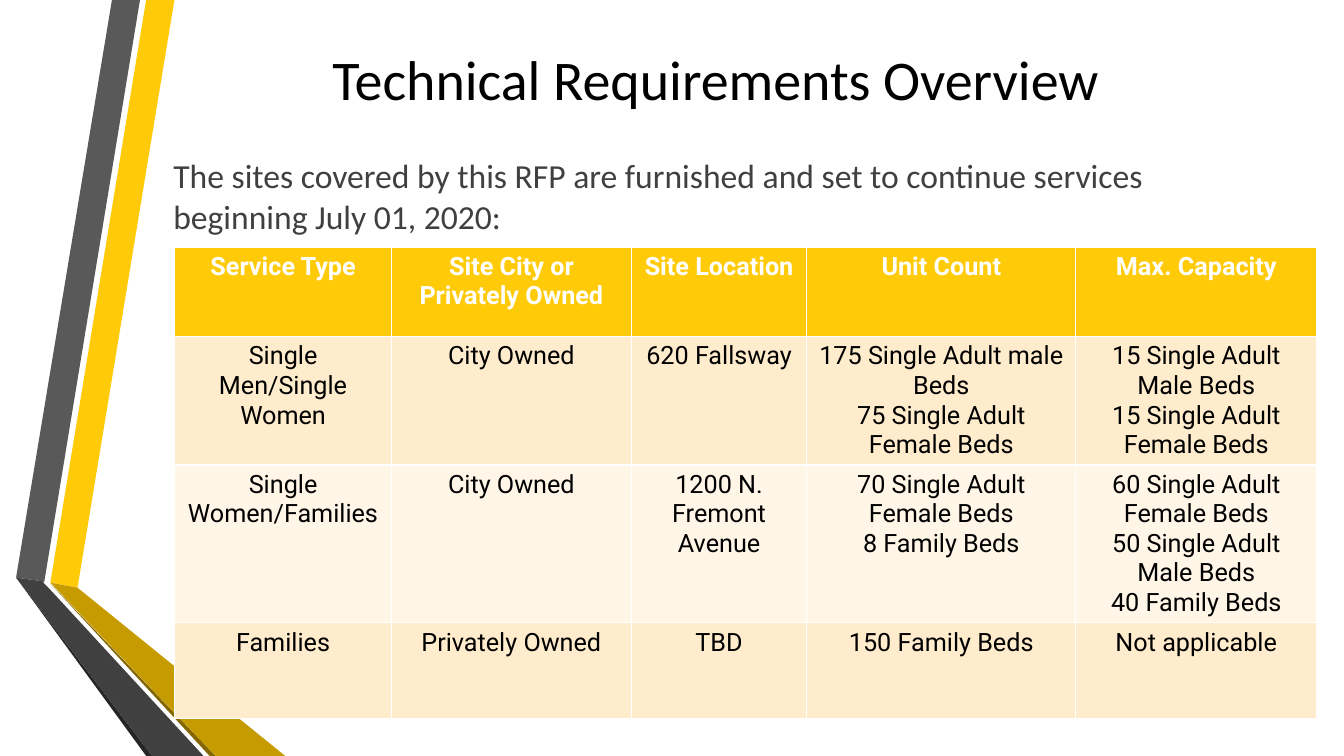
"""Build the Technical Requirements Overview slide."""
from pptx import Presentation
from pptx.dml.color import RGBColor
from pptx.enum.text import MSO_ANCHOR, MSO_AUTO_SIZE, PP_ALIGN
from pptx.oxml.ns import qn
from pptx.util import Pt
from lxml import etree

CENTER, LEFT = PP_ALIGN.CENTER, PP_ALIGN.LEFT
TOP, MIDDLE = MSO_ANCHOR.TOP, MSO_ANCHOR.MIDDLE
NO_AUTOFIT = MSO_AUTO_SIZE.NONE

WHITE = RGBColor(0xFF, 0xFF, 0xFF)
BLACK = RGBColor(0x00, 0x00, 0x00)
YELLOW = RGBColor(0xFF, 0xCA, 0x08)
GOLD = RGBColor(0xC5, 0x9B, 0x00)
OLIVE = RGBColor(0x84, 0x67, 0x00)
GRAY = RGBColor(0x59, 0x59, 0x59)
CHARCOAL = RGBColor(0x40, 0x40, 0x40)
NEAR_BLACK = RGBColor(0x26, 0x26, 0x26)
PEACH = RGBColor(0xFF, 0xEC, 0xCC)
CREAM = RGBColor(0xFF, 0xF6, 0xE7)

RIBBONS = [
    (YELLOW, [(36, 416.2), (55.4, 419.8), (124.6, 0), (104.4, 0)]),
    (GRAY, [(100, 0), (80, 0), (11.5, 412.6), (31.7, 415.4)]),
    (NEAR_BLACK, [(11.5, 412.6), (104.4, 540), (108.7, 540)]),
    (OLIVE, [(36, 416.9), (149.8, 540), (154.1, 540)]),
    (GOLD, [(36, 416.2), (154.1, 540), (203.8, 540), (55.4, 419.8)]),
    (CHARCOAL, [(145.4, 540), (34.6, 419.8), (31, 416.2), (31.7, 415.4),
                (11.5, 412.6), (108.7, 540)]),
]
COL_WIDTHS = [154.8, 171.4, 125.3, 192.2, 172.1]
ROW_HEIGHTS = [64, 68.4, 70.6, 68.4]
ROW_FILLS = [YELLOW, PEACH, CREAM, PEACH]
ROWS = [
    ["Service Type", "Site City or Privately Owned", "Site Location",
     "Unit Count", "Max. Capacity"],
    ["Single Men/Single Women", "City Owned", "620 Fallsway",
     "175 Single Adult male Beds\n75 Single Adult Female Beds",
     "15 Single Adult\nMale Beds\n15 Single Adult Female Beds"],
    ["Single Women/Families", "City Owned", "1200 N. Fremont Avenue",
     "70 Single Adult Female Beds\n8 Family Beds",
     "60 Single Adult Female Beds\n50 Single Adult Male Beds\n40 Family Beds"],
    ["Families", "Privately Owned", "TBD", "150 Family Beds", "Not applicable"],
]


def format_text(tf, font, size, color, align, bold=False):
    for p in tf.paragraphs:
        p.alignment = align
        for r in p.runs:
            r.font.name = font
            r.font.size = Pt(size)
            r.font.bold = bold
            r.font.color.rgb = color


prs = Presentation()
prs.slide_width, prs.slide_height = Pt(960), Pt(540)
s = prs.slides.add_slide(prs.slide_layouts[1])

for color, points in RIBBONS:
    corners = [(Pt(x), Pt(y)) for x, y in points]
    builder = s.shapes.build_freeform(*corners[0])
    builder.add_line_segments(corners[1:], close=True)
    sp = builder.convert_to_shape()
    sp.fill.solid()
    sp.fill.fore_color.rgb = color
    sp.line.fill.background()
    sp.shadow.inherit = False

title, body = s.shapes.title, s.placeholders[1]
for sp, top, height, anchor, text, size, color, align in [
    (title, 20.9, 69.8, MIDDLE, "Technical Requirements Overview", 40, BLACK, CENTER),
    (body, 107.2, 66, TOP, "The sites covered by this RFP are furnished and set to "
     "continue services beginning July 01, 2020:", 24, CHARCOAL, LEFT),
]:
    sp.left, sp.top, sp.width, sp.height = Pt(116.6), Pt(top), Pt(789.1), Pt(height)
    tf = sp.text_frame
    tf.text = text
    tf.word_wrap = True
    tf.auto_size = NO_AUTOFIT
    tf.vertical_anchor = anchor
    format_text(tf, "Calibri", size, color, align)

p = body.text_frame.paragraphs[0]
p.space_before = Pt(0)
pPr = p._p.get_or_add_pPr()
pPr.set("marL", "0")
pPr.set("indent", "0")
etree.SubElement(pPr, qn("a:buNone"))

table = s.shapes.add_table(len(ROWS), len(COL_WIDTHS), Pt(124.8), Pt(176.4),
                           Pt(sum(COL_WIDTHS)), Pt(sum(ROW_HEIGHTS))).table
for column, width in zip(table.columns, COL_WIDTHS):
    column.width = Pt(width)
for i, (row, height, fill, texts) in enumerate(
        zip(table.rows, ROW_HEIGHTS, ROW_FILLS, ROWS)):
    row.height = Pt(height)
    for cell, text in zip(row.cells, texts):
        cell.text = text
        cell.fill.solid()
        cell.fill.fore_color.rgb = fill
        format_text(cell.text_frame, "Roboto", 18, BLACK if i else WHITE,
                    CENTER, bold=i == 0)

prs.save("out.pptx")
